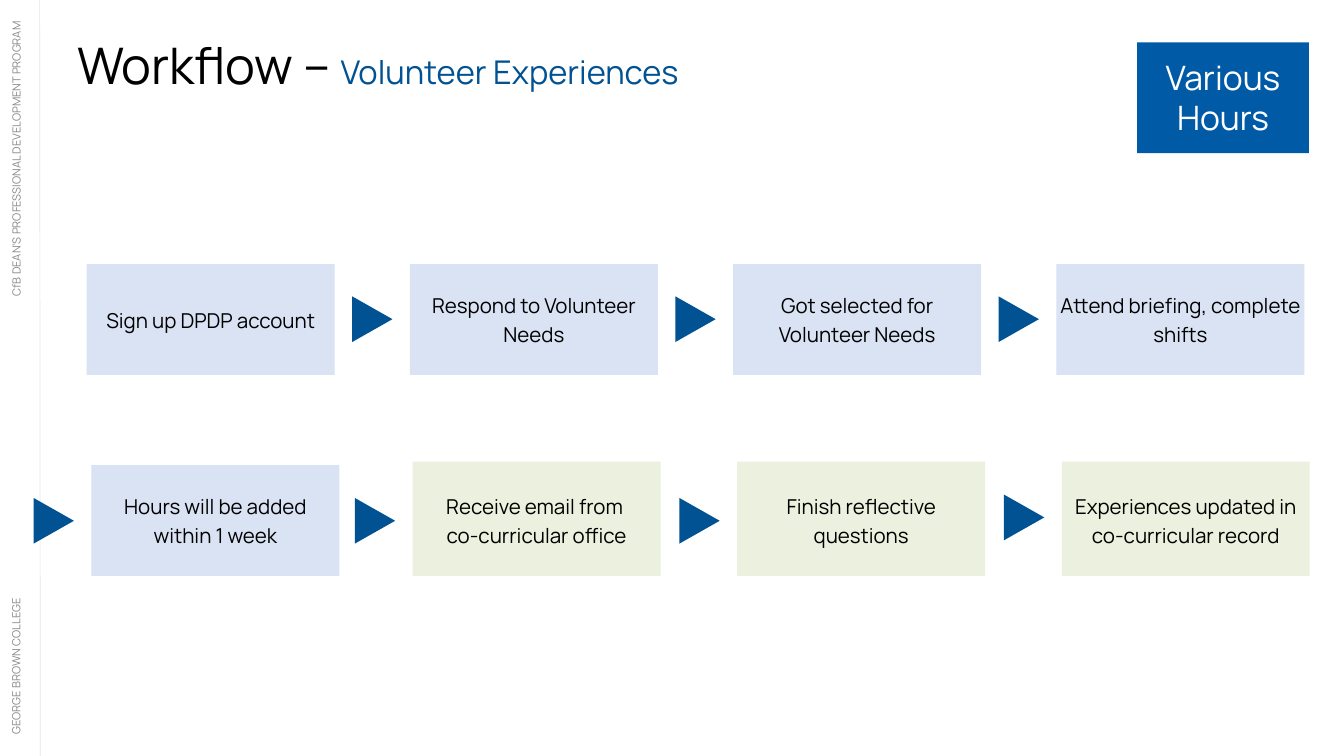
"""Build the volunteer workflow slide."""
import pptx
import pptx.dml.color
import pptx.enum.shapes
import pptx.enum.text
import pptx.util
from lxml import etree

RGBColor = pptx.dml.color.RGBColor
Align = pptx.enum.text.PP_ALIGN
Anchor = pptx.enum.text.MSO_ANCHOR
Shape = pptx.enum.shapes.MSO_SHAPE

BLACK = RGBColor(0x00, 0x00, 0x00)
WHITE = RGBColor(0xFF, 0xFF, 0xFF)
GREY = RGBColor(0x89, 0x89, 0x89)
RULE_GREY = RGBColor(0xE7, 0xE6, 0xE6)
NAVY = RGBColor(0x00, 0x52, 0x93)
BADGE_BLUE = RGBColor(0x00, 0x5A, 0xA5)
PALE_BLUE = RGBColor(0xDA, 0xE3, 0xF3)
PALE_GREEN = RGBColor(0xEB, 0xF1, 0xDE)

COLUMNS, ROWS = 20, 11.25
BOX_WIDTH, BOX_HEIGHT = 3.69, 1.65
ARROW_BASE, ARROW_LENGTH, ARROW_LEAD = 0.68, 0.6, 0.86
INSET = 0.06

FIRST_ROW = [
    (1.29, ["Sign up DPDP account"]),
    (6.1, ["Respond to Volunteer Needs"]),
    (10.91, ["Got selected for Volunteer Needs"]),
    (15.72, ["Attend briefing, complete shifts"]),
]
SECOND_ROW = [
    (1.36, ["Hours will be added within 1 week"], PALE_BLUE, 7.75),
    (6.14, ["Receive email from ", "co-curricular office"], PALE_GREEN, 7.75),
    (10.97, ["Finish reflective questions"], PALE_GREEN, 7.75),
    (15.8, ["Experiences updated in co-curricular record"], PALE_GREEN, 7.7),
]


def write(para, text, size=22, color=BLACK, align=Align.CENTER, spacing=30.8):
    """Add a formatted run of text to a paragraph."""
    para.alignment = align
    para.line_spacing = pptx.util.Pt(spacing)
    span = para.add_run()
    span.text = text
    span.font.name = "Manrope"
    span.font.size = pptx.util.Pt(size)
    span.font.color.rgb = color


class WorkflowSlide:
    """Hold the slide and its grid, and draw each kind of element."""

    def __init__(self, deck):
        """Add a title-only page and measure its grid."""
        self.page = deck.slides.add_slide(deck.slide_layouts[5])
        self.column = deck.slide_width / COLUMNS
        self.row = deck.slide_height / ROWS

    def place(self, left, top, width, height):
        """Turn grid columns and rows into slide lengths."""
        return (round(left * self.column), round(top * self.row),
                round(width * self.column), round(height * self.row))

    def set_frame(self, frame, inset=0, anchor=Anchor.TOP):
        """Set the margins, anchor and wrapping of a text frame."""
        margin = pptx.util.Inches(inset)
        frame.margin_left = frame.margin_right = margin
        frame.margin_top = frame.margin_bottom = margin
        frame.vertical_anchor = anchor
        frame.word_wrap = True
        frame.auto_size = pptx.enum.text.MSO_AUTO_SIZE.NONE

    def title(self, area, parts):
        """Place the title and write its differently styled parts."""
        title = self.page.shapes.title
        title.left, title.top, title.width, title.height = self.place(*area)
        self.set_frame(title.text_frame)
        for text, size, color in parts:
            write(title.text_frame.paragraphs[0], text, size=size, color=color,
                  align=Align.LEFT, spacing=58.3)

    def side_label(self, area, text, align):
        """Write a small label that reads upwards."""
        label = self.page.shapes.add_textbox(*self.place(*area))
        label.rotation = 270
        self.set_frame(label.text_frame)
        write(label.text_frame.paragraphs[0], text, size=12, color=GREY,
              align=align, spacing=14.4)

    def rule(self, start, end):
        """Draw a thin line between two grid points."""
        line = self.page.shapes.add_connector(
            pptx.enum.shapes.MSO_CONNECTOR.STRAIGHT, *self.place(*start, *end))
        line.line.color.rgb = RULE_GREY
        line.line.width = pptx.util.Pt(0.75)
        etree.SubElement(line.element.spPr, pptx.oxml.ns.qn("a:effectLst"))

    def shape(self, kind, area, fill):
        """Add a flat filled shape without an outline."""
        shape = self.page.shapes.add_shape(kind, *self.place(*area))
        shape.shadow.inherit = False
        shape.fill.solid()
        shape.fill.fore_color.rgb = fill
        shape.line.fill.background()
        return shape

    def box(self, area, lines, fill, lift=0.05, **style):
        """Draw a box whose centred text sits slightly high."""
        box = self.shape(Shape.RECTANGLE, area, fill)
        frame = box.text_frame
        self.set_frame(frame, INSET, Anchor.MIDDLE)
        frame.margin_bottom = pptx.util.Inches(INSET + lift)
        for index, text in enumerate(lines):
            para = frame.add_paragraph() if index else frame.paragraphs[0]
            write(para, text, **style)

    def arrow(self, box_left, middle):
        """Draw a right-pointing triangle ahead of a box."""
        center = box_left - ARROW_LEAD + ARROW_LENGTH / 2
        area = (center - ARROW_BASE / 2, middle - ARROW_LENGTH / 2,
                ARROW_BASE, ARROW_LENGTH)
        self.shape(Shape.ISOSCELES_TRIANGLE, area, NAVY).rotation = 90


def main():
    """Build and save the deck."""
    deck = pptx.Presentation()
    deck.slide_width = pptx.util.Inches(COLUMNS)
    deck.slide_height = pptx.util.Inches(ROWS)
    slide = WorkflowSlide(deck)

    slide.rule((0.59, 0), (0.6, ROWS))
    slide.side_label((-2.06, 8.41, 4.71, 0.32), "GEORGE BROWN COLLEGE", Align.LEFT)
    slide.side_label((-2.11, 2.57, 4.71, 0.21),
                     "CfB DEAN’S PROFESSIONAL DEVELOPMENT PROGRAM", Align.RIGHT)
    slide.title((1.15, 0.6, 18.2, 0.84),
                [("Workflow – ", 54, BLACK), ("Volunteer Experiences", 35, NAVY)])
    slide.box((16.92, 0.63, 2.56, BOX_HEIGHT), ["Various", "Hours"], BADGE_BLUE,
              lift=0.03, size=36, color=WHITE, spacing=43.2)

    for index, (left, lines) in enumerate(FIRST_ROW):
        slide.box((left, 3.93, BOX_WIDTH, BOX_HEIGHT), lines, PALE_BLUE)
        if index:
            slide.arrow(left, 4.75)
    for left, lines, fill, middle in SECOND_ROW:
        lift = 0.05 if fill == PALE_BLUE else 0
        slide.box((left, 6.92 - 0.05 + lift, BOX_WIDTH, BOX_HEIGHT + 0.05 - lift),
                  lines, fill, lift=lift)
        slide.arrow(left, middle)

    deck.save("out.pptx")


if __name__ == "__main__":
    main()
